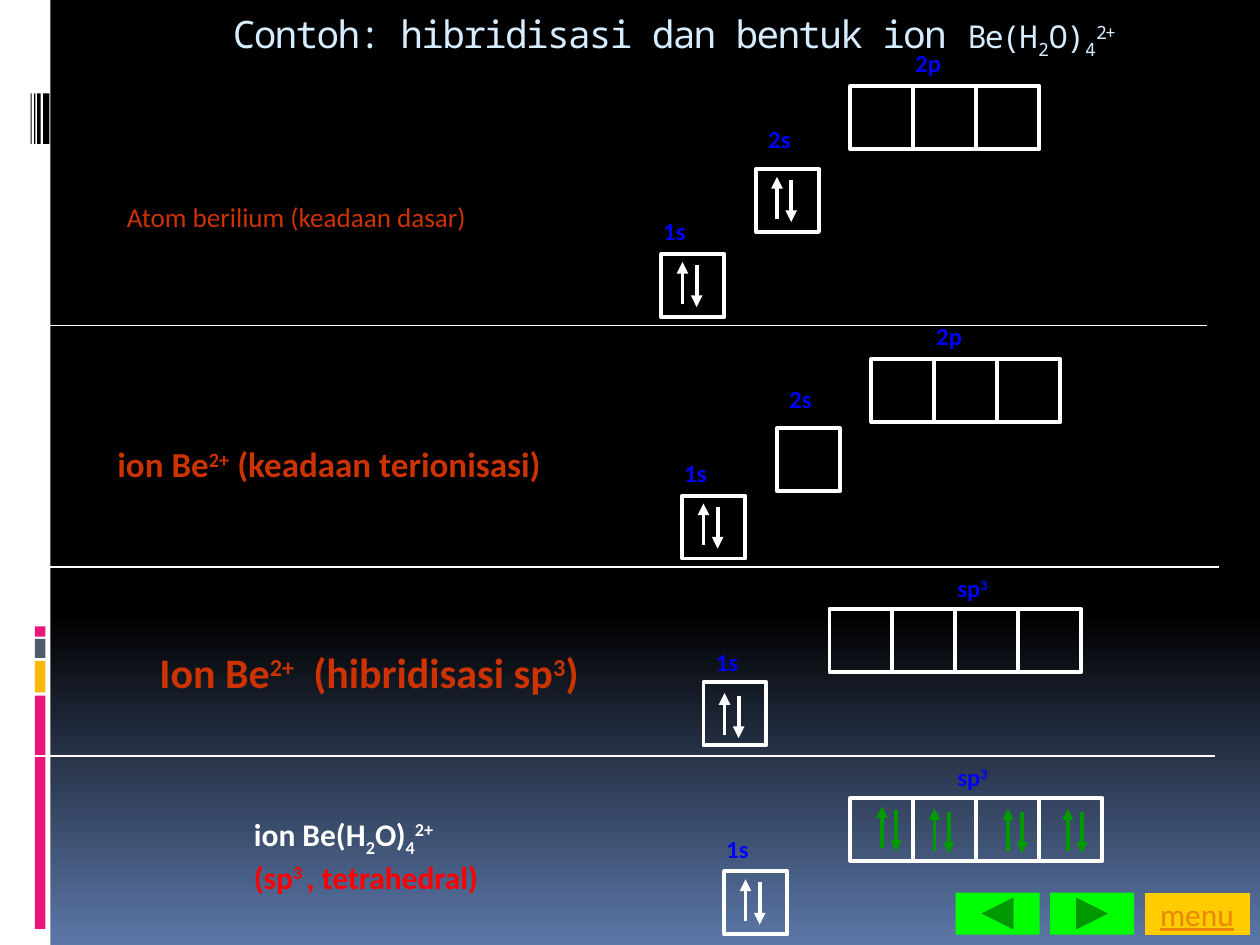
from lxml import etree
from pptx import Presentation, util as u
from pptx.dml.color import RGBColor
from pptx.enum import shapes, text
from pptx.oxml import ns

# ---- Content: lengths are in grid units of 1/12 inch ----
UNIT = 1 / 12
COLS, ROWS = 120, 90
BOX = 6  # side of an orbital box
C = {"white": "FFFFFF", "black": "000000", "sky": "5B77A8", "title": "D6ECFF",
     "rust": "CC3300", "blue": "0000FF", "red": "FF0000", "green": "009900",
     "lime": "00FF00", "gold": "FFCC00", "link": "EB8803",
     "pink": "EA157A", "amber": "FEB80A", "slate": "4E5B6F"}
SUB, SUP = -25, 30

# Side strip: left, top, width, height, colour
STRIP = [(0, 0, 4.8, ROWS, "white"),
         (3.32, 66.26, 1, 22.2, "pink"), (3.32, 62.95, 1, 3, "amber"),
         (3.32, 60.85, 1, 1.8, "slate"), (3.32, 59.65, 1, 1, "pink")]
STRIP += [(x, 8.9, w, 4.8, "black")
          for x, w in ((4.1, 0.6), (3.53, 0.34), (3.26, 0.12), (2.92, 0.1))]

# Runs: text, baseline shift, and a size where it changes
TITLE = [[("Contoh: hibridisasi dan bentuk ion ", 0, 21.6), ("Be(H", 0), ("2", SUB),
          ("O)", 0), ("4", SUB), ("2+", SUP)]]
# Captions: left, top, width, height, size, bold, paragraph colours, paragraphs
CAPTIONS = [
    (10.9, 18.5, 50, 5, 15.5, False, ["rust"], [[("Atom berilium (keadaan dasar)", 0)]]),
    (10, 41.6, 50, 5, 20, True, ["rust"],
     [[("ion Be", 0), ("2+", SUP), (" (keadaan terionisasi)", 0)]]),
    (14, 61, 50, 6, 24, True, ["rust"],
     [[("Ion Be", 0), ("2+", SUP), ("  (hibridisasi sp", 0), ("3", SUP), (")", 0)]]),
    (23, 77, 38, 8.4, 18, True, ["white", "red"],
     [[("ion Be(H", 0), ("2", SUB), ("O)", 0), ("4", SUB), ("2+", SUP)],
      [("(sp", 0), ("3 ", SUP), (", tetrahedral)", 0)]]),
]

# Orbitals: label, label position, box position, box count, electron pairs, pair colour
S1, S2, P2 = [("1s", 0)], [("2s", 0)], [("2p", 0)]
SP3 = [("sp", 0), ("3", SUP)]
PAIR = [(2, 0.75)]
BONDS = [(3, 0.8), (8, 1), (15, 1), (20.7, 1)]
ORBITALS = [
    # beryllium atom
    (S1, (62, 20), (63, 24.2), 1, PAIR, "white"),
    (S2, (72, 11.2), (72, 16.1), 1, PAIR, "white"),
    (P2, (86, 4), (81, 8.2), 3, [], "white"),
    # ionised
    (S1, (64, 43), (65, 47.2), 1, PAIR, "white"),
    (S2, (74, 36), (74, 40.8), 1, [], "white"),
    (P2, (88, 30), (83, 34.2), 3, [], "white"),
    # hybridised
    (S1, (67, 61), (67, 65), 1, [(2, 1)], "white"),
    (SP3, (90, 54), (79, 58), 4, [], "white"),
    # complex ion
    (S1, (68, 78.8), (69, 83), 1, PAIR, "white"),
    (SP3, (90, 72), (81, 76), 4, BONDS, "green"),
]
# Dividers: left, right, height on the slide
DIVIDERS = [(2.6, 115, 31), (3.1, 116.1, 54), (2.6, 115.7, 72)]

# ---- Helpers ----
prs = Presentation()
prs.slide_width, prs.slide_height = u.Inches(COLS * UNIT), u.Inches(ROWS * UNIT)
s = prs.slides.add_slide(prs.slide_layouts[6])


def grid(*values):
    return [u.Inches(v * UNIT) for v in values]


def rgb(name):
    return RGBColor.from_string(C[name])


def add_shape(place, fill=None, line=None, kind=shapes.MSO_SHAPE.RECTANGLE):
    sp = s.shapes.add_shape(kind, *grid(*place))
    sp.shadow.inherit = False
    if fill:
        sp.fill.solid()
        sp.fill.fore_color.rgb = rgb(fill)
    else:
        sp.fill.background()
    if line:
        sp.line.color.rgb = rgb(line)
        sp.line.width = u.Pt(2.25)
    else:
        sp.line.fill.background()
    return sp


def add_line(start, end, color, width, arrow=False):
    ln = s.shapes.add_connector(shapes.MSO_CONNECTOR.STRAIGHT, *grid(*start, *end))
    ln.line.color.rgb = rgb(color)
    ln.line.width = u.Pt(width)
    if arrow:
        etree.SubElement(ln.line._get_or_add_ln(), ns.qn("a:tailEnd"), type="triangle")
    etree.SubElement(ln._element.spPr, ns.qn("a:effectLst"))


def add_text(place, paragraphs, size, colors, bold=False, font="Calibri", spacing=0):
    tf = s.shapes.add_textbox(*grid(*place)).text_frame
    tf.word_wrap = True
    for i, (runs, color) in enumerate(zip(paragraphs, colors)):
        p = tf.add_paragraph() if i else tf.paragraphs[0]
        for content, shift, *own_size in runs:
            r = p.add_run()
            r.text = content
            r.font.name, r.font.bold = font, bold
            r.font.size = u.Pt(own_size[0] if own_size else size)
            r.font.color.rgb = rgb(color)
            rpr = r.font._element
            if shift:
                rpr.set("baseline", str(shift * 1000))
            if spacing:
                rpr.set("spc", str(spacing * 100))
    return tf


# ---- Background and side strip ----
fill = s.background.fill
fill.gradient()
fill.gradient_angle = 270
for stop, (position, color) in zip(fill.gradient_stops, ((0.65, "black"), (1, "sky"))):
    stop.position = position
    stop.color.rgb = rgb(color)
for *place, color in STRIP:
    add_shape(place, color)

# ---- Title and captions ----
tf = add_text((21, 0.4, 96, 6), TITLE, 18, ["title"], font="Noto Sans Mono", spacing=-1)
tf.vertical_anchor = text.MSO_ANCHOR.MIDDLE
for *place, size, bold, colors, paragraphs in CAPTIONS:
    add_text(place, paragraphs, size, colors, bold)

# ---- Orbital boxes, electron pairs and labels ----
for label, label_at, (x, y), count, pairs, color in ORBITALS:
    for i in range(count):
        add_shape((x + i * BOX, y, BOX, BOX), line="white")
    for dx, dy in pairs:
        up, top = x + dx, y + dy
        down = up + 1.35
        add_line((up, top + 4), (up, top), color, 2.25, arrow=True)
        add_line((down, top + 0.3), (down, top + 4.3), color, 2.25, arrow=True)
    add_text((*label_at, BOX, 4), [label], 14, ["blue"], bold=True)

# ---- Dividers ----
for left, right, y in DIVIDERS:
    add_line((left, y), (right, y), "white", 0.75)

# ---- Navigation buttons ----
add_shape((91, 85, 8, 4), "lime", kind=shapes.MSO_SHAPE.ACTION_BUTTON_BACK_OR_PREVIOUS)
add_shape((100, 85, 8, 4), "lime", kind=shapes.MSO_SHAPE.ACTION_BUTTON_FORWARD_OR_NEXT)
menu = add_shape((109, 85, 10, 4), "gold", kind=shapes.MSO_SHAPE.ACTION_BUTTON_CUSTOM)
tf = menu.text_frame
tf.text = "menu"
tf.word_wrap = False
tf.vertical_anchor = text.MSO_ANCHOR.MIDDLE
p = tf.paragraphs[0]
p.alignment = text.PP_ALIGN.CENTER
f = p.runs[0].font
f.name, f.size, f.underline = "Calibri", u.Pt(18), True
f.color.rgb = rgb("link")

prs.save("out.pptx")
